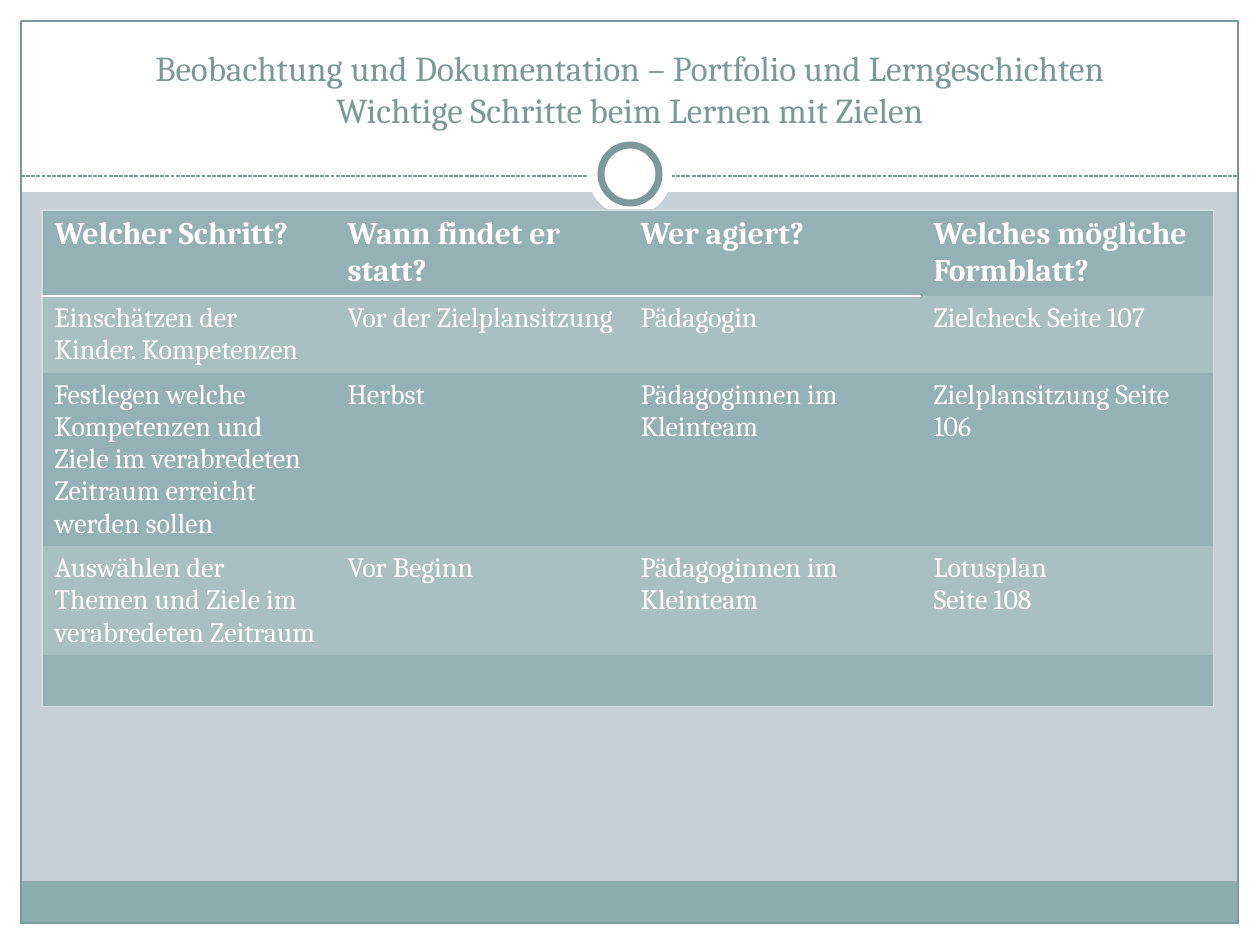
from dataclasses import dataclass

from lxml import etree
from pptx import Presentation
from pptx.dml.color import RGBColor
from pptx.enum.dml import MSO_LINE
from pptx.enum.shapes import MSO_CONNECTOR, MSO_SHAPE
from pptx.enum.text import MSO_ANCHOR, MSO_AUTO_SIZE, PP_ALIGN
from pptx.oxml.ns import qn
from pptx.util import Emu, Pt

RECT, OVAL = MSO_SHAPE.RECTANGLE, MSO_SHAPE.OVAL
STRAIGHT, DASH = MSO_CONNECTOR.STRAIGHT, MSO_LINE.SQUARE_DOT
LEFT, CENTER = PP_ALIGN.LEFT, PP_ALIGN.CENTER
TITLE_ONLY = 5


@dataclass(frozen=True)
class Theme:
    font: str = "Cambria"
    background: str = "C5D1D7"
    white: str = "FFFFFF"
    accent: str = "7C999A"
    footer: str = "8CADAE"
    dark_row: str = "94B1B3"
    light_row: str = "A9C0C1"
    border: str = "D0DBDB"
    title_size: int = 20
    header_size: int = 18
    body_size: int = 16


theme = Theme()


def px(*lengths):
    """Turn pixels (126 to the inch) into EMU."""
    return [Emu(round(length * 914400 / 126)) for length in lengths]


def write(frame, text, size=theme.body_size, color=theme.white, bold=False, align=LEFT):
    """Fill a text frame: \\n starts a paragraph, \\v breaks a line."""
    frame.text = text
    for para in frame.paragraphs:
        para.alignment = align
        for line_break in para._p.findall(qn("a:br")):
            etree.SubElement(line_break, qn("a:rPr"), sz=str(size * 100))
        for span in para.runs:
            span.font.name = theme.font
            span.font.size = Pt(size)
            span.font.bold = bold
            span.font.color.rgb = RGBColor.from_string(color)


deck = Presentation()
deck.slide_width, deck.slide_height = px(1260, 945)
page = deck.slides.add_slide(deck.slide_layouts[TITLE_ONLY])
page.background.fill.solid()
page.background.fill.fore_color.rgb = RGBColor.from_string(theme.background)

# Frame, bands and ring: kind, box, fill, line width
decorations = [
    (RECT, (0, 924, 1260, 21), theme.white, 0),
    (RECT, (0, 0, 1260, 192), theme.white, 0),
    (RECT, (0, 0, 21, 945), theme.white, 0),
    (RECT, (1239, 0, 21, 945), theme.white, 0),
    (RECT, (20, 881, 1218, 43), theme.footer, 0),
    (RECT, (21, 21, 1217, 902), None, 0.75),
    (OVAL, (588, 132, 84, 84), theme.white, 0),
    (OVAL, (601, 145, 58, 58), theme.white, 4),
]
for kind, box, fill, line_width in decorations:
    if box == (588, 132, 84, 84):
        divider = page.shapes.add_connector(STRAIGHT, *px(21, 176, 1238, 176))
        divider.line.color.rgb = RGBColor.from_string(theme.accent)
        divider.line.width = Pt(0.75)
        divider.line.dash_style = DASH
        etree.SubElement(divider._element.spPr, qn("a:effectLst"))
    shape = page.shapes.add_shape(kind, *px(*box))
    shape.shadow.inherit = False
    if fill:
        shape.fill.solid()
        shape.fill.fore_color.rgb = RGBColor.from_string(fill)
    else:
        shape.fill.background()
    if line_width:
        shape.line.color.rgb = RGBColor.from_string(theme.accent)
        shape.line.width = Pt(line_width)
    else:
        shape.line.fill.background()

# Title, moved in front of the bands
title = page.shapes.title
title.left, title.top, title.width, title.height = px(42, 32, 1176, 105)
title.text_frame.word_wrap = True
title.text_frame.auto_size = MSO_AUTO_SIZE.NONE
title.text_frame.vertical_anchor = MSO_ANCHOR.BOTTOM
write(
    title.text_frame,
    "Beobachtung und Dokumentation – Portfolio und Lerngeschichten\v"
    "Wichtige Schritte beim Lernen mit Zielen",
    size=theme.title_size, color=theme.accent, align=CENTER,
)
page.shapes._spTree.append(title._element)

# Table of steps
steps = [
    ["Welcher Schritt?", "Wann findet er statt?", "Wer agiert?", "Welches mögliche Formblatt?"],
    ["Einschätzen der Kinder. Kompetenzen", "Vor der Zielplansitzung", "Pädagogin",
     "Zielcheck Seite 107"],
    ["Festlegen welche Kompetenzen und Ziele im verabredeten Zeitraum erreicht werden sollen",
     "Herbst", "Pädagoginnen im Kleinteam", "Zielplansitzung Seite 106"],
    ["Auswählen der Themen und Ziele im verabredeten Zeitraum", "Vor Beginn",
     "Pädagoginnen im Kleinteam", "Lotusplan\nSeite 108"],
    ["", "", "", ""],
]
row_heights = px(86, 77, 173, 109, 51)
last_row, last_column = len(steps) - 1, len(steps[0]) - 1
table = page.shapes.add_table(
    len(steps), len(steps[0]), *px(42, 210, 1172), sum(row_heights)
).table
table.horz_banding = False
for column in table.columns:
    column.width = px(293)[0]

outline, rule = (theme.border, 0.75), (theme.white, 1.57)
for r, texts in enumerate(steps):
    table.rows[r].height = row_heights[r]
    for c, text in enumerate(texts):
        cell = table.cell(r, c)
        header_rule = rule if c < last_column else None
        borders = {
            "a:lnL": outline if c == 0 else None,
            "a:lnR": outline if c == last_column else None,
            "a:lnT": {0: outline, 1: header_rule}.get(r),
            "a:lnB": {0: header_rule, last_row: outline}.get(r),
        }
        properties = cell._tc.get_or_add_tcPr()
        for side, border in borders.items():
            line = etree.SubElement(properties, qn(side))
            if border:
                color, width = border
                line.set("w", str(Pt(width)))
                paint = etree.SubElement(line, qn("a:solidFill"))
                etree.SubElement(paint, qn("a:srgbClr"), val=color)
            else:
                etree.SubElement(line, qn("a:noFill"))
        cell.fill.solid()
        cell.fill.fore_color.rgb = RGBColor.from_string(
            theme.light_row if r % 2 else theme.dark_row
        )
        is_header = r == 0
        write(cell.text_frame, text, bold=is_header,
              size=theme.header_size if is_header else theme.body_size)

deck.save("out.pptx")
